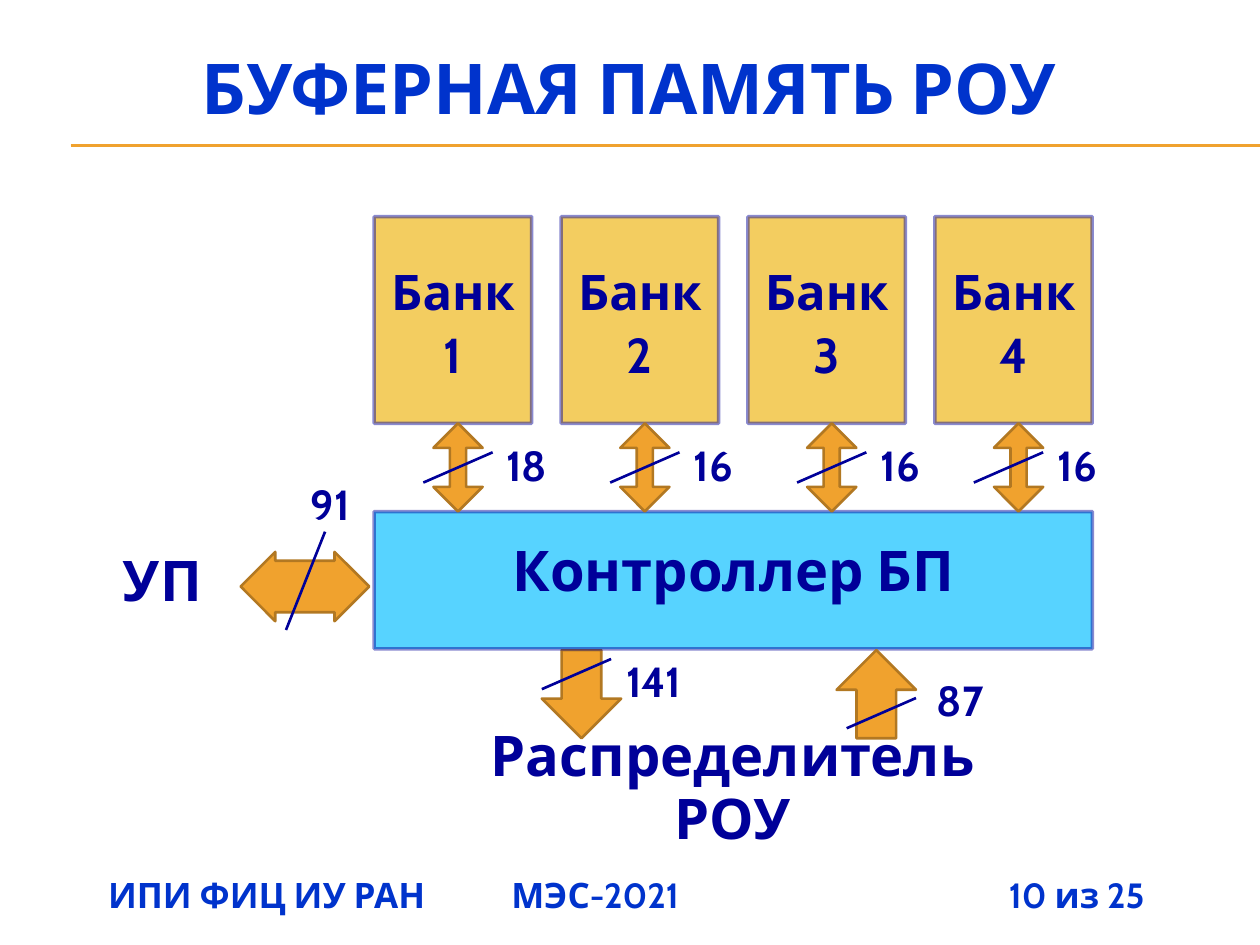
from lxml import etree
from pptx import Presentation
from pptx.dml.color import RGBColor
from pptx.enum.shapes import MSO_CONNECTOR, MSO_SHAPE
from pptx.enum.text import MSO_ANCHOR, PP_ALIGN
from pptx.oxml.ns import qn
from pptx.util import Inches, Pt

NAVY = RGBColor(0x00, 0x00, 0x99)
BLUE = RGBColor(0x00, 0x33, 0xCC)
ORANGE = RGBColor(0xF0, 0xA2, 0x2E)
BROWN = RGBColor(0xB2, 0x78, 0x22)
YELLOW = RGBColor(0xF3, 0xCD, 0x60)
CYAN = RGBColor(0x57, 0xD3, 0xFF)

BANK_LEFT, BANK_PITCH = 2.97, 1.483
SLASH_RUN, SLASH_RISE = 0.55, 0.24


class Diagram:
    def __init__(self, page, font="Cabin"):
        self.page = page
        self.font = font

    def add_span(self, para, text, size, color=NAVY):
        span = para.add_run()
        span.text = text
        span.font.name = self.font
        span.font.size = Pt(size)
        span.font.bold = True
        span.font.color.rgb = color

    def title(self, text, *place):
        box = self.page.shapes.title
        box.left, box.top, box.width, box.height = map(Inches, place)
        box.text_frame.vertical_anchor = MSO_ANCHOR.MIDDLE
        para = box.text_frame.paragraphs[0]
        para.alignment = PP_ALIGN.CENTER
        self.add_span(para, text, 40, BLUE)

    def shape(self, kind, place, fill, line, width):
        shape = self.page.shapes.add_shape(kind, *map(Inches, place))
        shape.shadow.inherit = False
        shape.fill.solid()
        shape.fill.fore_color.rgb = fill
        shape.line.color.rgb = line
        shape.line.width = Pt(width)
        return shape

    def block(self, lines, place, fill, size, spacing):
        """Add a captioned rectangle with a half-transparent outline."""
        block = self.shape(MSO_SHAPE.RECTANGLE, place, fill, NAVY, 2)
        color = block._element.spPr.find(qn("a:ln")).find(".//" + qn("a:srgbClr"))
        etree.SubElement(color, qn("a:alpha"), val="46000")
        frame = block.text_frame
        frame.word_wrap = True
        frame.vertical_anchor = MSO_ANCHOR.MIDDLE
        para = frame.paragraphs[0]
        para.alignment = PP_ALIGN.CENTER
        para.line_spacing = Pt(spacing)
        for index, line in enumerate(lines):
            if index:
                para.add_line_break()
            self.add_span(para, line, size)

    def arrow(self, kind, place, adjustments=()):
        arrow = self.shape(kind, place, ORANGE, BROWN, 1.5)
        for index, value in enumerate(adjustments):
            arrow.adjustments[index] = value

    def line(self, start, end, color=NAVY, width=1.5):
        line = self.page.shapes.add_connector(
            MSO_CONNECTOR.STRAIGHT, *map(Inches, start + end))
        line.line.color.rgb = color
        line.line.width = Pt(width)
        etree.SubElement(line._element.spPr, qn("a:effectLst"))

    def slash(self, x, y):
        self.line((x, y), (x + SLASH_RUN, y - SLASH_RISE))

    def label(self, text, left, top, width=0.7, height=0.39, size=24):
        box = self.page.shapes.add_textbox(
            *map(Inches, (left, top, width, height)))
        frame = box.text_frame
        frame.word_wrap = True
        frame.vertical_anchor = MSO_ANCHOR.MIDDLE
        frame.margin_left = frame.margin_right = 0
        frame.margin_top = frame.margin_bottom = 0
        para = frame.paragraphs[0]
        para.alignment = PP_ALIGN.CENTER
        para.line_spacing = Pt(36)
        self.add_span(para, text, size)

    def footer(self, parts, *place):
        """Add one line of text with each part at its own tab stop."""
        box = self.page.shapes.add_textbox(*map(Inches, place))
        box.text_frame.word_wrap = True
        para = box.text_frame.paragraphs[0]
        tabs = etree.SubElement(para._p.get_or_add_pPr(), qn("a:tabLst"))
        for stop, text in parts:
            etree.SubElement(tabs, qn("a:tab"), pos=str(Inches(stop)), algn="l")
            self.add_span(para, "\t" + text, 20, BLUE)


def main():
    deck = Presentation()
    deck.slide_width, deck.slide_height = Inches(10), Inches(7.5)
    diagram = Diagram(deck.slides.add_slide(deck.slide_layouts[5]))

    for y in (1.15, 1.16):
        diagram.line((0.56, y), (10, y), ORANGE, 0.75)
    diagram.title("БУФЕРНАЯ ПАМЯТЬ РОУ", 0.16, 0.23, 9.66, 0.92)

    diagram.arrow(MSO_SHAPE.DOWN_ARROW, (4.3, 5.16, 0.63, 0.7))
    diagram.block(["Контроллер БП"], (2.97, 4.06, 5.7, 1.09), CYAN, 32, 26)

    # Bus width of each bank and the sideways shift of its mark
    buses = [("18", 0), ("16", 0), ("16", 0), ("16", -0.08)]
    for index, (bits, shift) in enumerate(buses):
        left = BANK_LEFT + index * BANK_PITCH
        diagram.block(["Банк", str(index + 1)], (left, 1.72, 1.25, 1.64),
                      YELLOW, 28, 36)
        diagram.arrow(MSO_SHAPE.UP_DOWN_ARROW, (left + 0.47, 3.36, 0.39, 0.7),
                      (0.671, 0.329))
        diagram.label(bits, left + 0.86 + shift, 3.44)
        diagram.slash(left + 0.39 + shift, 3.83)

    diagram.arrow(MSO_SHAPE.LEFT_RIGHT_ARROW, (1.91, 4.38, 1.02, 0.55),
                  (0.744, 0.5))
    diagram.line((2.27, 5), (2.58, 4.22))
    diagram.label("91", 2.27, 3.75)
    diagram.label("УП", 0.86, 4.3, 0.86, 0.63, 32)

    diagram.label("141", 4.84, 5.16)
    diagram.slash(4.3, 5.47)
    diagram.label("Распределитель РОУ", 3.59, 5.94, 4.45, 0.63, 32)
    diagram.arrow(MSO_SHAPE.UP_ARROW, (6.64, 5.16, 0.63, 0.7))
    diagram.label("87", 7.27, 5.31)
    diagram.slash(6.72, 5.78)

    diagram.footer([(0.76, "ИПИ ФИЦ ИУ РАН"), (3.96, "МЭС-2021"),
                    (7.91, "10 из 25")], 0, 6.88, 10, 0.47)
    deck.save("out.pptx")


if __name__ == "__main__":
    main()
